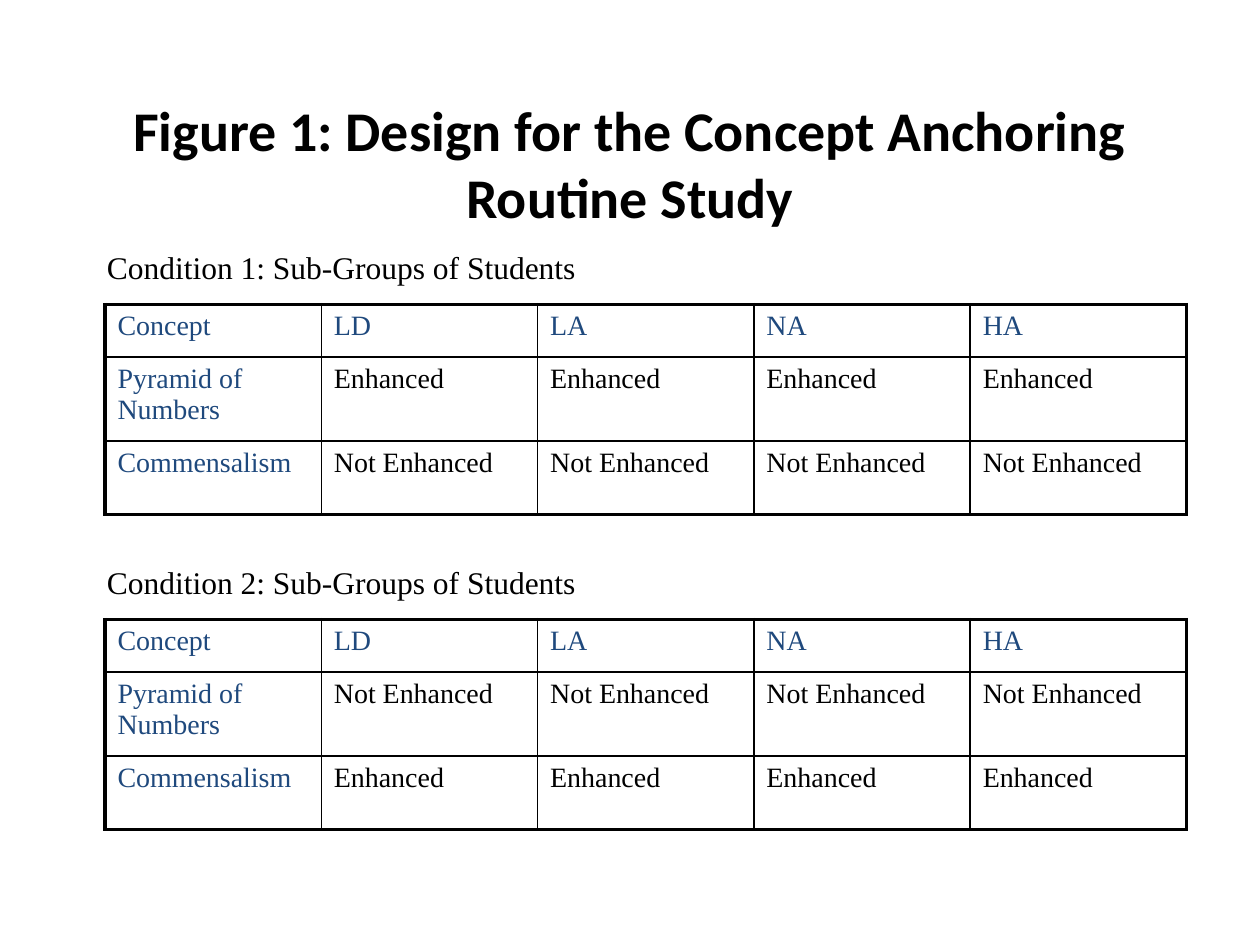
from lxml import etree
from pptx import Presentation
from pptx.dml.color import RGBColor
from pptx.enum import text
from pptx.oxml import ns
from pptx.util import Pt

# Content
TITLE = "Figure 1: Design for the Concept Anchoring Routine Study"
HEADER = ["Concept", "LD", "LA", "NA", "HA"]
CONDITIONS = [
    ("Condition 1: Sub-Groups of Students",
     [("Pyramid of Numbers", "Enhanced"), ("Commensalism", "Not Enhanced")]),
    ("Condition 2: Sub-Groups of Students",
     [("Pyramid of Numbers", "Not Enhanced"), ("Commensalism", "Enhanced")]),
]

# Layout in points
LABEL_LEFT, LABEL_TOP, LABEL_WIDTH, LABEL_HEIGHT = 54, 138, 289, 29
TABLE_LEFT, TABLE_WIDTH, TABLE_OFFSET = 60, 618, 36
ROW_HEIGHTS = [30, 48, 42]
CONDITION_STEP = 180
THICK, THIN = 2.25, 1

BLACK, NAVY = "000000", "1F497D"
TITLE_FONT = {"name": "Calibri", "size": Pt(32), "bold": True}
LABEL_FONT = {"name": "Times New Roman", "size": Pt(18), "bold": False}
CELL_FONT = {"name": "Times New Roman", "size": Pt(16), "bold": False}


def write(frame, words, font, color):
    para = frame.paragraphs[0]
    span = para.add_run()
    span.text = words
    for key, value in font.items():
        setattr(span.font, key, value)
    span.font.color.rgb = RGBColor.from_string(color)
    return para


def add_borders(cell, widths):
    properties = cell._tc.get_or_add_tcPr()
    for place, (side, width) in enumerate(widths.items()):
        line = etree.Element(ns.qn("a:ln" + side), w=str(Pt(width)))
        fill = etree.SubElement(line, ns.qn("a:solidFill"))
        etree.SubElement(fill, ns.qn("a:srgbClr"), val=BLACK)
        properties.insert(place, line)


def add_condition(page, label, results, top):
    # Label above the table
    box = page.shapes.add_textbox(Pt(LABEL_LEFT), Pt(top), Pt(LABEL_WIDTH), Pt(LABEL_HEIGHT))
    box.text_frame.word_wrap = True
    write(box.text_frame, label, LABEL_FONT, BLACK)

    # Table: one header row, then one row for each concept
    rows = [HEADER] + [[concept] + [result] * (len(HEADER) - 1) for concept, result in results]
    last_row, last_column = len(rows) - 1, len(HEADER) - 1
    table = page.shapes.add_table(
        len(rows), len(HEADER), Pt(TABLE_LEFT), Pt(top + TABLE_OFFSET),
        Pt(TABLE_WIDTH), Pt(sum(ROW_HEIGHTS))).table
    table.first_row = table.horz_banding = False
    for row, height in zip(table.rows, ROW_HEIGHTS):
        row.height = Pt(height)
    for column in table.columns:
        column.width = Pt(TABLE_WIDTH / len(HEADER))

    for r, row in enumerate(rows):
        for c, words in enumerate(row):
            cell = table.cell(r, c)
            cell.fill.background()
            para = write(cell.text_frame, words, CELL_FONT, BLACK if r and c else NAVY)
            spacing = etree.SubElement(para._p.get_or_add_pPr(), ns.qn("a:spcBef"))
            etree.SubElement(spacing, ns.qn("a:spcPct"), val="20000")
            add_borders(cell, {
                "L": THICK if c == 0 else THIN,
                "R": THICK if c == last_column else THIN,
                "T": THICK if r == 0 else THIN,
                "B": THICK if r == last_row else THIN,
            })


deck = Presentation()
deck.slide_width, deck.slide_height = Pt(720), Pt(540)
page = deck.slides.add_slide(deck.slide_layouts[5])

# Title
title = page.shapes.title
title.left, title.top, title.width, title.height = Pt(54), Pt(48), Pt(612), Pt(90)
title.text_frame.vertical_anchor = text.MSO_ANCHOR.MIDDLE
write(title.text_frame, TITLE, TITLE_FONT, BLACK).alignment = text.PP_ALIGN.CENTER

# Conditions, one below the other
for number, (label, results) in enumerate(CONDITIONS):
    add_condition(page, label, results, LABEL_TOP + number * CONDITION_STEP)

deck.save("out.pptx")
